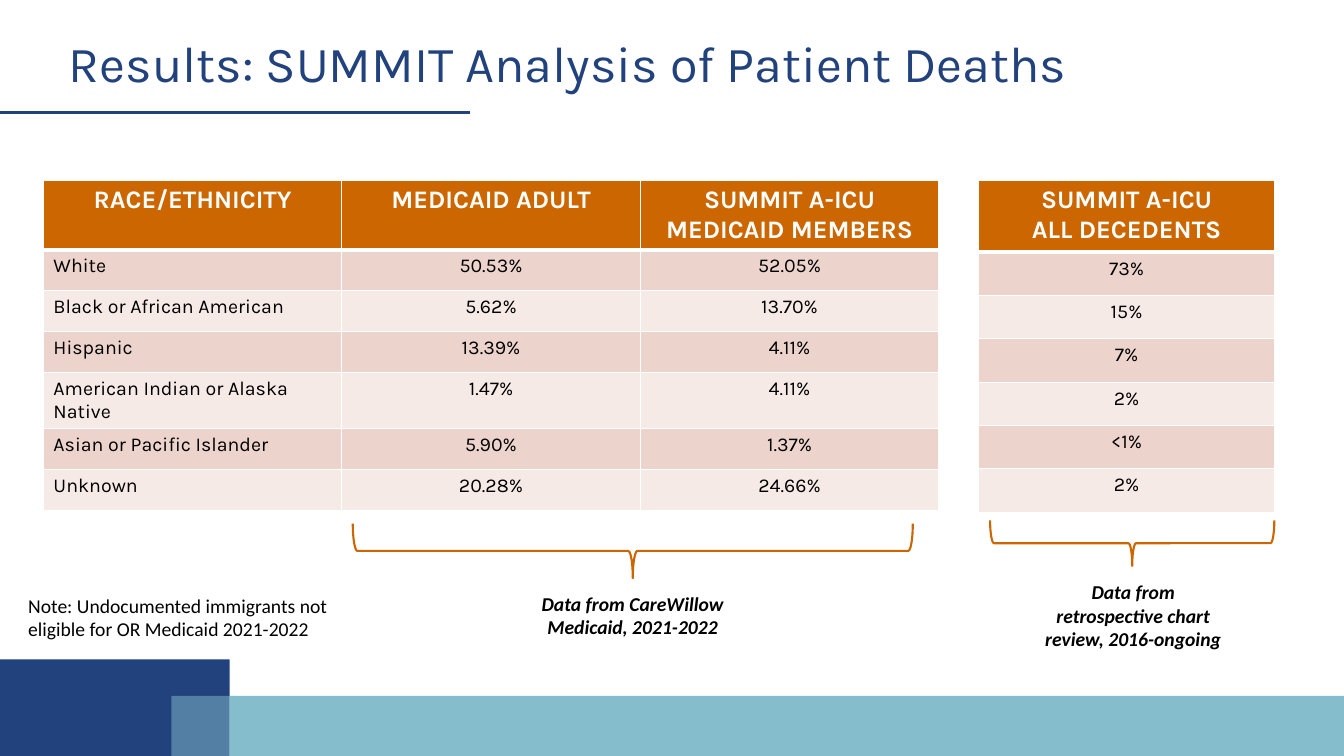
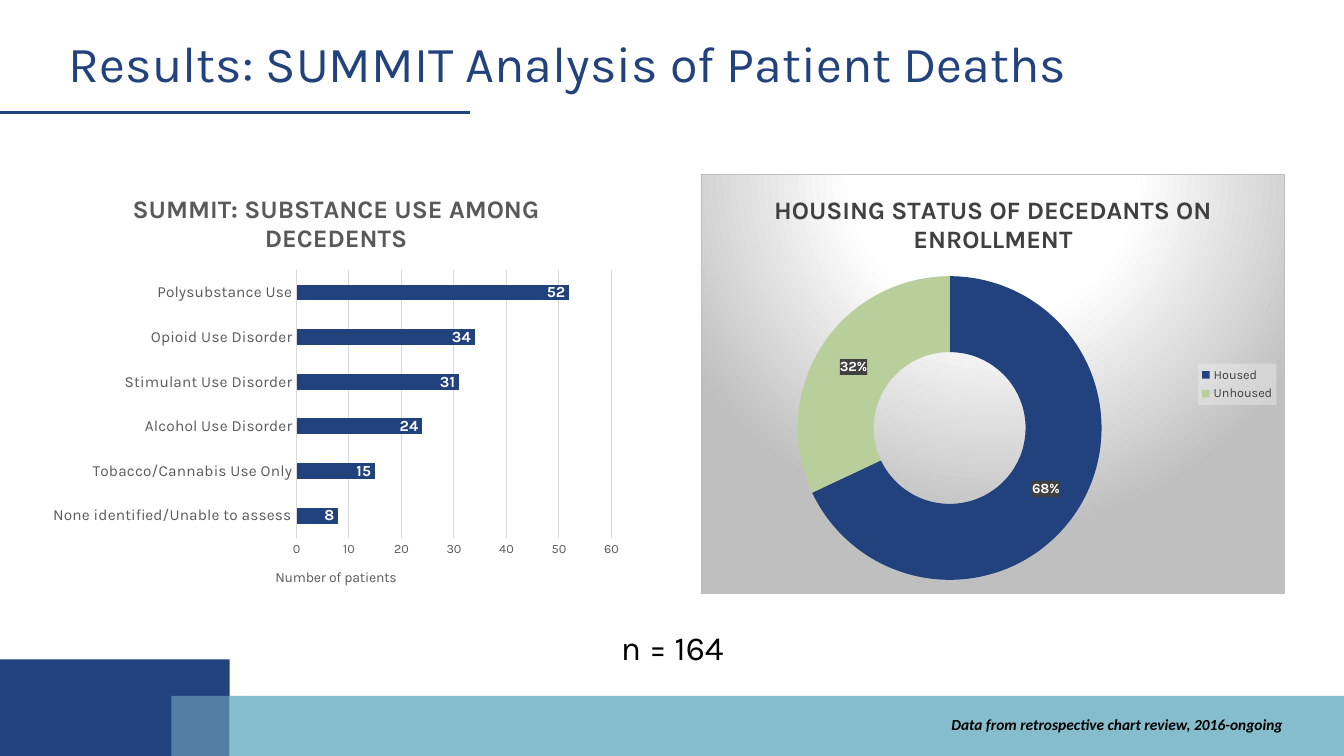
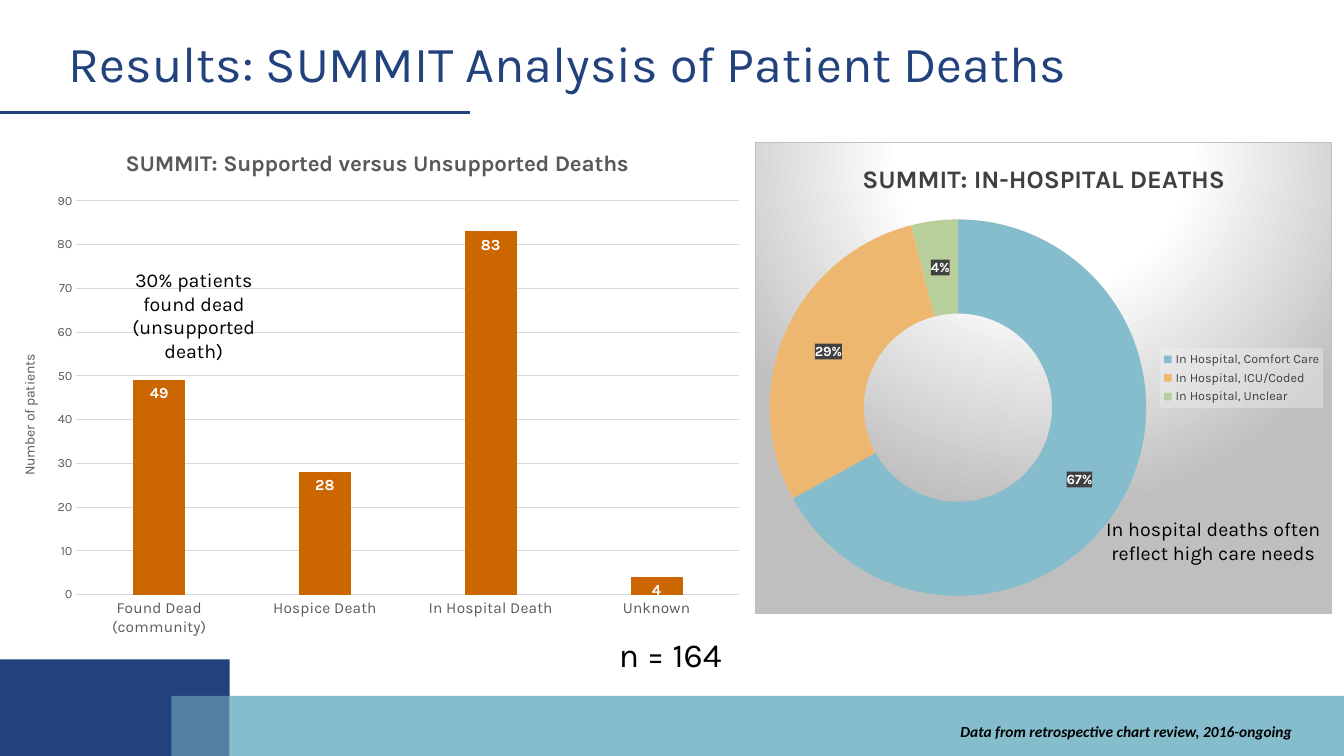
"""Build three results slides on patient deaths, with tables and charts."""
import dataclasses

import lxml.etree
import pptx
import pptx.chart.data
import pptx.dml.color
import pptx.enum.chart
import pptx.enum.shapes
import pptx.enum.text
import pptx.oxml
import pptx.oxml.ns
import pptx.util

Pt = pptx.util.Pt
RGB = pptx.dml.color.RGBColor.from_string
ALIGN = pptx.enum.text.PP_ALIGN
CHART = pptx.enum.chart.XL_CHART_TYPE
SHAPE = pptx.enum.shapes.MSO_SHAPE
qn = pptx.oxml.ns.qn


@dataclasses.dataclass(frozen=True)
class Theme:
    """Colours and type styles shared by all slides."""
    navy: str = "21427C"
    teal: str = "85BDCC"
    orange: str = "CC6600"
    amber: str = "EDB770"
    green: str = "B8CE9B"
    white: str = "FFFFFF"
    black: str = "000000"
    slate: str = "404040"
    grey: str = "595959"
    silver: str = "BFBFBF"
    mist: str = "F2F2F2"
    grid: str = "D9D9D9"
    bands: tuple = ("ECD3CC", "F6EAE7")

    def type_style(self, role):
        """Return the format values of a type role."""
        size, colour, bold, italic, name = {
            "title": (36, self.navy, False, False, "Karla"),
            "table head": (18, self.white, True, False, "Karla"),
            "table body": (14, self.black, False, False, "Karla"),
            "note": (14, self.black, False, False, "Calibri"),
            "source": (14, self.black, True, True, "Calibri"),
            "footer": (11, self.black, True, True, "Calibri"),
            "sample": (24, self.black, False, False, "Karla"),
            "callout": (14, self.black, False, False, "Karla"),
            "chart": (10, self.black, False, False, "Karla"),
            "ring title": (18, self.slate, True, False, "Karla"),
            "bar title": (18, self.grey, True, False, "Karla"),
            "column title": (16, self.grey, True, False, "Karla"),
            "axis title": (10, self.grey, False, False, "Karla"),
            "category": (11, self.grey, False, False, "Karla"),
            "scale": (9, self.grey, False, False, "Karla"),
            "legend": (9, self.slate, False, False, "Karla"),
            "bar label": (11, self.white, True, False, "Karla"),
            "ring label": (10, self.white, True, False, "Karla"),
        }[role]
        return {"size": Pt(size), "bold": bold, "italic": italic, "name": name}, colour


theme = Theme()

TITLE = "Results: SUMMIT Analysis of Patient Deaths"
SOURCE = "Data from retrospective chart review, 2016-ongoing"
SAMPLE = "n = 164"

BANDS = [
    ((0, 471, 164, 69), theme.navy, 100),
    ((164, 497, 796, 43), theme.teal, 100),
    ((122.5, 497, 45, 43), theme.teal, 50),
]

TABLES = [
    {"origin": (31, 129), "column": 213.2, "heights": (29.25, 29.25), "rows": [
        ("RACE/ETHNICITY", "MEDICAID ADULT", "SUMMIT A-ICU MEDICAID MEMBERS"),
        ("White", "50.53%", "52.05%"),
        ("Black or African American", "5.62%", "13.70%"),
        ("Hispanic", "13.39%", "4.11%"),
        ("American Indian or Alaska Native", "1.47%", "4.11%"),
        ("Asian or Pacific Islander", "5.90%", "1.37%"),
        ("Unknown", "20.28%", "24.66%"),
    ]},
    {"origin": (699, 129), "column": 211.5, "heights": (51, 31), "rows": [
        ("SUMMIT A-ICU\nALL DECEDENTS",),
        ("73%",), ("15%",), ("7%",), ("2%",), ("<1%",), ("2%",),
    ]},
]
BRACES = [(432.5, 193.5, 39, 400), (792.5, 286.5, 32.5, 203)]

SUBSTANCE_USE = {
    "kind": CHART.BAR_CLUSTERED, "box": (29.5, 124, 421, 309),
    "title": "SUMMIT: SUBSTANCE USE AMONG DECEDENTS", "role": "bar title",
    "axis": "Number of patients", "top": 60, "colour": theme.navy,
    "bars": {"gap_width": 182},
    "data": [("None identified/Unable to assess", 8), ("Tobacco/Cannabis Use Only", 15),
             ("Alcohol Use Disorder", 24), ("Stimulant Use Disorder", 31),
             ("Opioid Use Disorder", 34), ("Polysubstance Use", 52)],
}
HOUSING = {
    "box": (500.5, 124.5, 417.5, 300),
    "title": "HOUSING STATUS OF DECEDANTS ON ENROLLMENT",
    "data": [("Housed", 68), ("Unhoused", 32)],
    "colours": (theme.navy, theme.green),
}
SUPPORT = {
    "kind": CHART.COLUMN_CLUSTERED, "box": (0, 92, 539, 370),
    "title": "SUMMIT: Supported versus Unsupported Deaths", "role": "column title",
    "axis": "Number of patients", "top": 90, "colour": theme.orange,
    "bars": {"gap_width": 219, "overlap": -27},
    "data": [("Found Dead (community)", 49), ("Hospice Death", 28),
             ("In Hospital Death", 83), ("Unknown", 4)],
}
IN_HOSPITAL = {
    "box": (539.5, 101.5, 412, 337),
    "title": "SUMMIT: IN-HOSPITAL DEATHS",
    "data": [("In Hospital, Comfort Care", 67), ("In Hospital, ICU/Coded", 29),
             ("In Hospital, Unclear", 4)],
    "colours": (theme.teal, theme.amber, theme.green),
}

SLIDES = [
    {"tables": TABLES, "braces": BRACES, "texts": [
        ("Data from CareWillow Medicaid, 2021-2022", (365, 419, 174, 41), "source", ALIGN.CENTER),
        (SOURCE, (739, 411, 141, 58), "source", ALIGN.CENTER),
        ("Note: Undocumented immigrants not eligible for OR Medicaid 2021-2022",
         (13, 420.5, 239, 41), "note", ALIGN.LEFT),
    ]},
    {"rings": [HOUSING], "bars": [SUBSTANCE_USE], "texts": [
        (SAMPLE, (139, 444, 682.5, 36), "sample", ALIGN.CENTER),
        (SOURCE, (672.5, 507, 269, 21), "footer", ALIGN.LEFT),
    ]},
    {"rings": [IN_HOSPITAL], "bars": [SUPPORT], "texts": [
        ("30% patients found dead (unsupported death)", (78.5, 188, 120, 75),
         "callout", ALIGN.CENTER),
        ("In hospital deaths often reflect high care needs", (782.5, 366, 168.5, 41),
         "callout", ALIGN.CENTER),
        (SOURCE, (679, 512.5, 269, 21), "footer", ALIGN.LEFT),
        (SAMPLE, (137.5, 449, 682.5, 36), "sample", ALIGN.CENTER),
    ]},
]


def assign(target, values):
    """Set several attributes on one object."""
    for name, value in values.items():
        setattr(target, name, value)


def set_type(font, role):
    """Give a font the values of a type role."""
    values, colour = theme.type_style(role)
    assign(font, values)
    font.color.rgb = RGB(colour)


def points(box):
    """Turn numbers into lengths."""
    return [Pt(number) for number in box]


def drawing(tag, body, **attributes):
    """Make a drawing element from its inner XML."""
    pairs = "".join(f' {name}="{value}"' for name, value in attributes.items())
    return pptx.oxml.parse_xml(
        f"<{tag}{pairs} {pptx.oxml.ns.nsdecls('a', 'c')}>{body}</{tag}>")


def solid(colour, alpha=100):
    """Return the XML of a solid fill."""
    return (f'<a:solidFill><a:srgbClr val="{colour}"><a:alpha val="{alpha * 1000}"/>'
            "</a:srgbClr></a:solidFill>")


def write(frame, text, role, align):
    """Write lines of text in one type role."""
    frame.text = text
    for paragraph in frame.paragraphs:
        paragraph.alignment = align
        set_type(paragraph.font, role)
        for run in paragraph.runs:
            set_type(run.font, role)


def add_text(slide, text, box, role, align):
    """Add a wrapped text box."""
    frame = slide.shapes.add_textbox(*points(box)).text_frame
    frame.word_wrap = True
    write(frame, text, role, align)


def prepare_layout(layout, slide):
    """Put the title place, bands and rule on the layout."""
    heading = layout.placeholders[0]
    assign(heading, dict(zip(("left", "top", "width", "height"), points((42, 13, 876, 57.5)))))
    assign(heading.text_frame, {"vertical_anchor": pptx.enum.text.MSO_ANCHOR.BOTTOM,
                                "auto_size": pptx.enum.text.MSO_AUTO_SIZE.NONE})
    parts = []
    for box, colour, alpha in BANDS:
        band = slide.shapes.add_shape(SHAPE.RECTANGLE, *points(box))
        band.shadow.inherit = False
        band.fill.solid()
        band.fill.fore_color.rgb = RGB(colour)
        band.line.fill.background()
        tint = band.element.spPr.find(".//" + qn("a:srgbClr"))
        lxml.etree.SubElement(tint, qn("a:alpha")).set("val", str(alpha * 1000))
        parts.append(band)
    rule = slide.shapes.add_connector(
        pptx.enum.shapes.MSO_CONNECTOR.STRAIGHT, *points((0, 80.5, 336, 80.5)))
    rule.line.color.rgb = RGB(theme.navy)
    rule.line.width = Pt(2.25)
    lxml.etree.SubElement(rule.element.spPr, qn("a:effectLst"))
    parts.append(rule)
    for number, part in enumerate(parts, 20):
        part.element.xpath(".//p:cNvPr")[0].set("id", str(number))
        layout.shapes.element.append(part.element)


def add_table(slide, content):
    """Add a table with a coloured header and alternating rows."""
    rows = content["rows"]
    head, body = content["heights"]
    width = content["column"] * len(rows[0])
    height = head + body * (len(rows) - 1)
    table = slide.shapes.add_table(
        len(rows), len(rows[0]), *points((*content["origin"], width, height))).table
    for column in table.columns:
        column.width = Pt(content["column"])
    for r, texts in enumerate(rows):
        table.rows[r].height = Pt(body if r else head)
        for c, text in enumerate(texts):
            cell = table.cell(r, c)
            is_label = r > 0 and c == 0 and len(texts) > 1
            write(cell.text_frame, text, "table body" if r else "table head",
                  ALIGN.LEFT if is_label else ALIGN.CENTER)
            cell.fill.solid()
            cell.fill.fore_color.rgb = RGB(theme.bands[(r - 1) % 2] if r else theme.orange)
            widths = {"L": 1, "R": 1, "T": 3 if r == 1 else 1, "B": 1 if r else 3}
            for place, (side, weight) in enumerate(widths.items()):
                edge = drawing(f"a:ln{side}", solid(theme.white), w=Pt(weight))
                cell._tc.get_or_add_tcPr().insert(place, edge)


def add_brace(slide, box):
    """Add a brace that opens upward."""
    brace = slide.shapes.add_shape(SHAPE.LEFT_BRACE, *points(box))
    brace.rotation = 270
    brace.shadow.inherit = False
    brace.fill.background()
    brace.line.color.rgb = RGB(theme.orange)
    brace.line.width = Pt(1.5)


def add_chart(slide, kind, content, role):
    """Add a one-series chart with its title."""
    numbers = pptx.chart.data.CategoryChartData()
    numbers.categories = [name for name, _ in content["data"]]
    numbers.add_series("Series 1", [value for _, value in content["data"]])
    chart = slide.shapes.add_chart(kind, *points(content["box"]), numbers).chart
    set_type(chart.font, "chart")
    chart.has_title = True
    write(chart.chart_title.text_frame, content["title"], role, ALIGN.CENTER)
    chart.chart_title.include_in_layout = False
    chart.plots[0].has_data_labels = True
    return chart


def set_backdrop(part, body):
    """Give a chart part its fill and line, ahead of its text format."""
    part.find(qn("c:txPr")).addprevious(drawing("c:spPr", body))


def add_bars(slide, content):
    """Add a bar or column chart."""
    chart = add_chart(slide, content["kind"], content, content["role"])
    chart.has_legend = False
    plot = chart.plots[0]
    assign(plot, {"vary_by_categories": False, **content["bars"]})
    fill = plot.series[0].format.fill
    fill.solid()
    fill.fore_color.rgb = RGB(content["colour"])
    assign(plot.data_labels, {"show_value": True,
                              "position": pptx.enum.chart.XL_LABEL_POSITION.INSIDE_END})
    set_type(plot.data_labels.font, "bar label")
    names, scale = chart.category_axis, chart.value_axis
    for axis, role in ((names, "category"), (scale, "scale")):
        axis.major_tick_mark = pptx.enum.chart.XL_TICK_MARK.NONE
        set_type(axis.tick_labels.font, role)
    assign(scale, {"minimum_scale": 0, "maximum_scale": content["top"], "major_unit": 10,
                   "has_major_gridlines": True, "has_title": True})
    write(scale.axis_title.text_frame, content["axis"], "axis title", ALIGN.CENTER)
    scale.format.line.fill.background()
    for line in (names.format.line, scale.major_gridlines.format.line):
        line.color.rgb = RGB(theme.grid)
        line.width = Pt(0.75)


def add_ring(slide, content):
    """Add a doughnut chart on a shaded panel."""
    chart = add_chart(slide, CHART.DOUGHNUT, content, "ring title")
    chart.has_legend = True
    assign(chart.legend, {"position": pptx.enum.chart.XL_LEGEND_POSITION.RIGHT,
                          "include_in_layout": False})
    set_type(chart.legend.font, "legend")
    plot = chart.plots[0]
    for index, colour in enumerate(content["colours"]):
        look = plot.series[0].points[index].format
        look.fill.solid()
        look.fill.fore_color.rgb = RGB(colour)
        look.line.fill.background()
    labels = plot.data_labels
    assign(labels, {"show_value": False, "show_percentage": True,
                    "number_format": "0%", "number_format_is_linked": False})
    set_type(labels.font, "ring label")
    set_backdrop(labels._element, solid(theme.slate, 90))
    set_backdrop(chart.legend._element, solid(theme.mist, 39))
    stops = "".join(f'<a:gs pos="{place * 1000}"><a:srgbClr val="{colour}"/></a:gs>'
                    for place, colour in ((0, theme.white), (39, theme.white),
                                          (100, theme.silver)))
    set_backdrop(chart._chartSpace, (
        f'<a:gradFill><a:gsLst>{stops}</a:gsLst><a:path path="circle">'
        '<a:fillToRect l="50000" t="-80000" r="50000" b="180000"/></a:path></a:gradFill>'
        f'<a:ln w="{Pt(0.75)}">{solid(theme.silver)}</a:ln>'))


def main():
    """Build and save the presentation."""
    deck = pptx.Presentation()
    assign(deck, {"slide_width": Pt(960), "slide_height": Pt(540)})
    layout = deck.slide_layouts.get_by_name("Title Only")
    builders = {"tables": add_table, "braces": add_brace, "rings": add_ring, "bars": add_bars}
    for number, content in enumerate(SLIDES):
        slide = deck.slides.add_slide(layout)
        if number == 0:
            prepare_layout(layout, slide)
        heading = slide.shapes.title.text_frame
        write(heading, TITLE, "title", ALIGN.LEFT)
        heading.paragraphs[0].line_spacing = 0.9
        for part, build in builders.items():
            for item in content.get(part, []):
                build(slide, item)
        for text in content["texts"]:
            add_text(slide, *text)
    deck.save("out.pptx")


if __name__ == "__main__":
    main()
